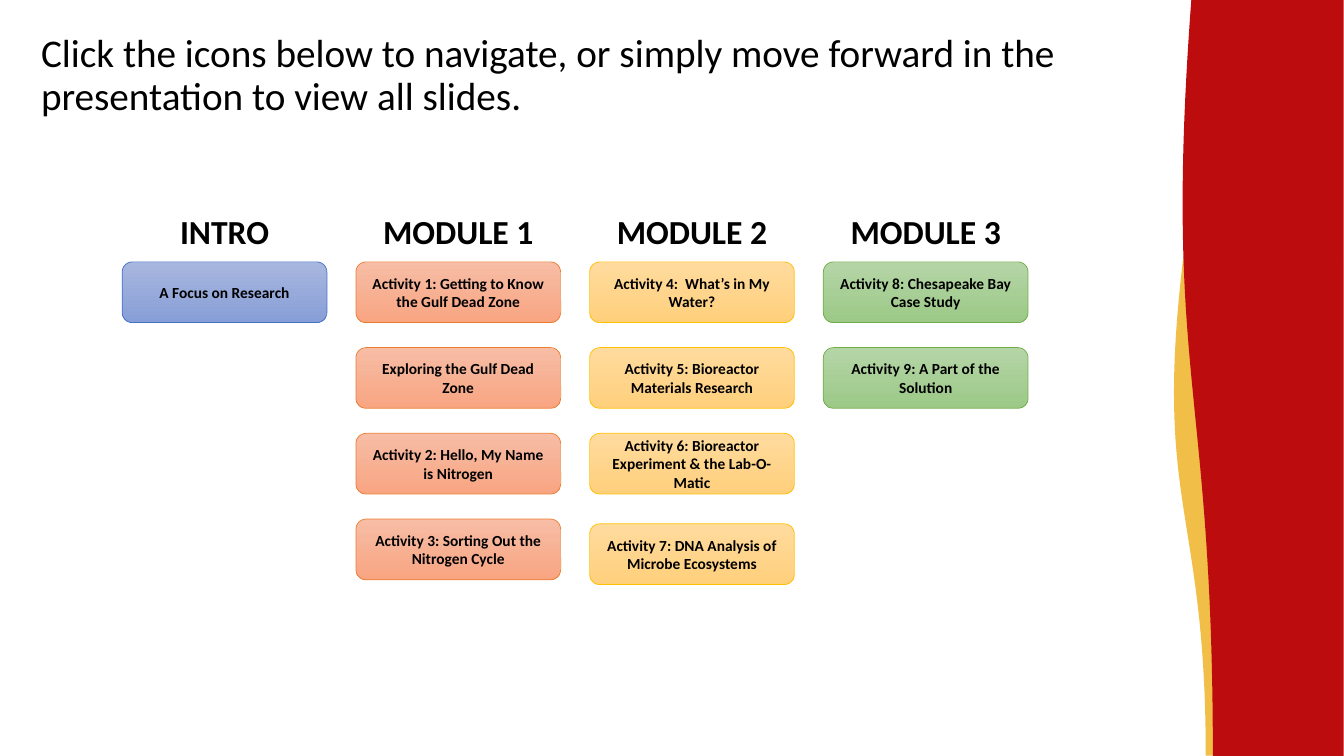
from lxml import etree
from pptx import Presentation
from pptx import util as u
from pptx.dml.color import RGBColor
from pptx.enum import shapes, text
from pptx.oxml.ns import qn

HUES = {
    "ink": "000000", "gold": "F1BE48", "red": "BD0C0D",
    # Gradient top, gradient bottom, outline
    "blue": ("A8B7DF", "889ED7", "4472C4"),
    "coral": ("F7BDA5", "F8A582", "ED7D31"),
    "amber": ("FFDB9E", "FFD07C", "FFC000"),
    "green": ("B5D5A7", "9CC987", "70AD47"),
}

# Heading, hue and activities of each column
MENU = [
    ("INTRO", "blue", ["A Focus on Research"]),
    ("MODULE 1", "coral", [
        "Activity 1: Getting to Know the Gulf Dead Zone",
        "Exploring the Gulf Dead Zone",
        "Activity 2: Hello, My Name is Nitrogen",
        "Activity 3: Sorting Out the Nitrogen Cycle"]),
    ("MODULE 2", "amber", [
        "Activity 4:  What’s in My Water?",
        "Activity 5: Bioreactor Materials Research",
        "Activity 6: Bioreactor Experiment & the Lab-O-Matic",
        "Activity 7: DNA Analysis of Microbe Ecosystems"]),
    ("MODULE 3", "green", [
        "Activity 8: Chesapeake Bay Case Study",
        "Activity 9: A Part of the Solution"]),
]

# Button grid, in cm
LEFT, TOP = 3.08, 6.6
STEP, PITCH = 5.89, 2.16
WIDE, HIGH = 5.16, 1.53
NUDGE = {(2, 3): 0.12}  # the last amber button sits a little lower


class Page:
    face = "Calibri"

    def __init__(self, deck):
        self.slide = deck.slides.add_slide(deck.slide_layouts[5])
        self.shapes = self.slide.shapes

    def hue(self, code):
        return RGBColor.from_string(code)

    def style(self, para, size, bold=False):
        font = para.font
        font.name, font.size, font.bold = self.face, u.Pt(size), bold
        font.color.rgb = self.hue(HUES["ink"])

    def shape(self, kind, *box):
        item = self.shapes.add_shape(kind, *map(u.Cm, box))
        item.shadow.inherit = False
        return item

    def title(self, words, *box):
        item = self.shapes.title
        item.left, item.top, item.width, item.height = map(u.Cm, box)
        frame = item.text_frame
        frame.text = words
        frame.word_wrap = True
        frame.auto_size = text.MSO_AUTO_SIZE.NONE
        frame.vertical_anchor = text.MSO_ANCHOR.TOP
        para = frame.paragraphs[0]
        para.alignment = text.PP_ALIGN.LEFT
        para.line_spacing = 0.9
        self.style(para, 28)

    def wave(self, name, *box):
        item = self.shape(shapes.MSO_SHAPE.FLOWCHART_DOCUMENT, *box)
        item.rotation = 90
        item.fill.solid()
        item.fill.fore_color.rgb = self.hue(HUES[name])
        item.line.fill.background()

    def button(self, words, name, x, y):
        item = self.shape(shapes.MSO_SHAPE.ROUNDED_RECTANGLE, x, y, WIDE, HIGH)
        *ends, edge = HUES[name]
        item.fill.gradient()
        item.fill.gradient_angle = 270
        for stop, code in zip(item.fill.gradient_stops, ends):
            stop.color.rgb = self.hue(code)
        item.line.color.rgb = self.hue(edge)
        item.line.width = u.Pt(0.5)
        frame = item.text_frame
        frame.text = words
        frame.word_wrap = True
        frame.vertical_anchor = text.MSO_ANCHOR.MIDDLE
        para = frame.paragraphs[0]
        para.alignment = text.PP_ALIGN.CENTER
        self.style(para, 11, True)

    def heads(self, names, stops, *box):
        frame = self.shapes.add_textbox(*map(u.Cm, box)).text_frame
        frame.word_wrap = True
        frame.margin_left = 0
        para = frame.paragraphs[0]
        para.text = "".join("\t" + name for name in names)
        tabs = etree.SubElement(para._p.get_or_add_pPr(), qn("a:tabLst"))
        for stop in stops:
            etree.SubElement(tabs, qn("a:tab"), pos=str(u.Cm(stop)), algn="ctr")
        self.style(para, 24, True)


def main():
    deck = Presentation()
    deck.slide_width, deck.slide_height = u.Cm(33.87), u.Cm(19.05)
    page = Page(deck)

    # Waves at the right edge
    page.wave("gold", 25.43, 10.62, 12.52, 4.32)
    page.wave("red", 22.28, 7.47, 19.05, 4.11)

    page.title("Click the icons below to navigate, or simply move forward in "
               "the presentation to view all slides.", 0.78, 0.73, 28.7, 2.57)

    # Headings centred over their columns
    stops = [WIDE / 2 + col * STEP for col in range(len(MENU))]
    page.heads([name for name, *_ in MENU], stops, LEFT, 5.19, 23.8, 1.28)

    # Buttons
    for col, (_, name, items) in enumerate(MENU):
        for row, words in enumerate(items):
            drop = NUDGE.get((col, row), 0)
            page.button(words, name, LEFT + col * STEP, TOP + row * PITCH + drop)

    deck.save("out.pptx")


if __name__ == "__main__":
    main()
